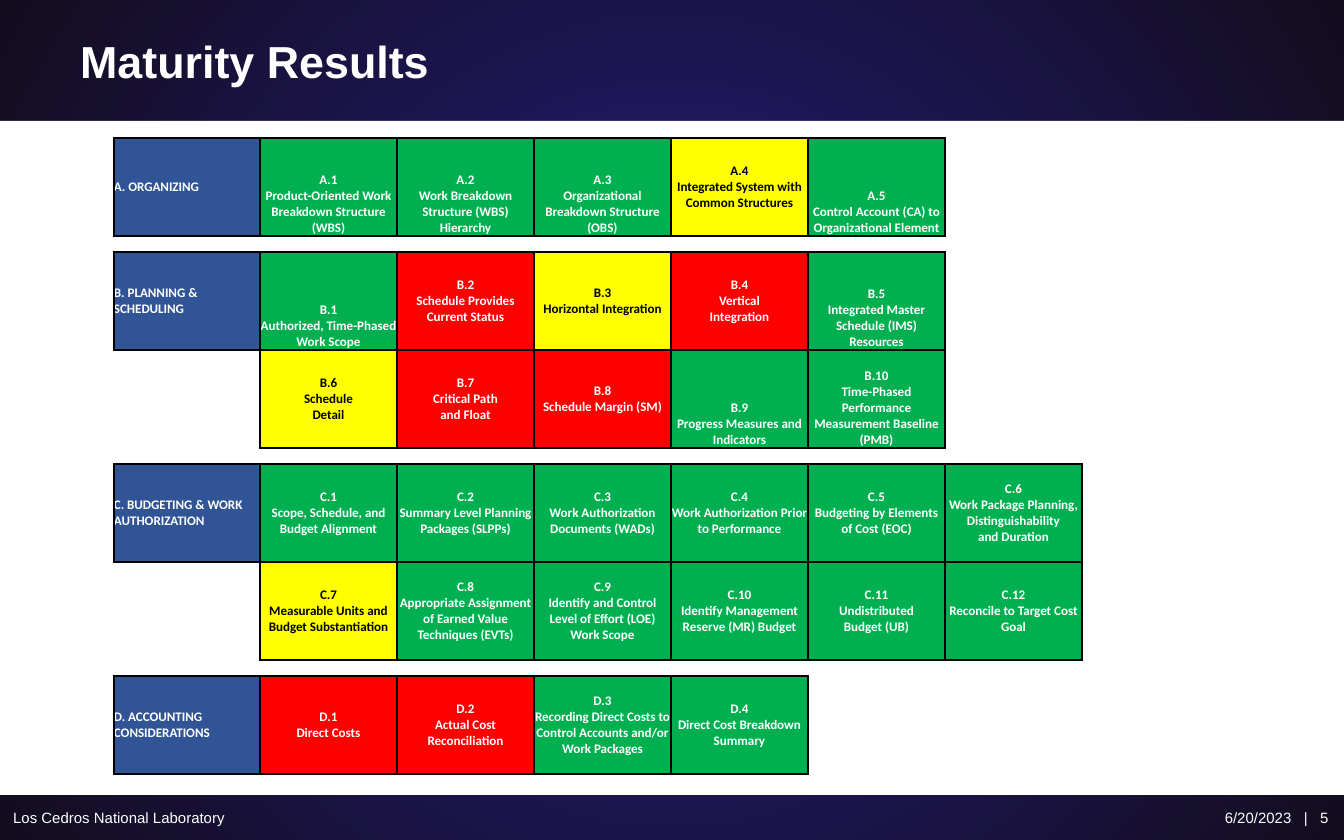
from lxml import etree
from pptx import Presentation
from pptx.dml.color import RGBColor
from pptx.enum.shapes import MSO_SHAPE
from pptx.enum.text import MSO_ANCHOR, PP_ALIGN
from pptx.oxml.ns import qn
from pptx.util import Pt

RECT = MSO_SHAPE.RECTANGLE
MID, LOW = MSO_ANCHOR.MIDDLE, MSO_ANCHOR.BOTTOM
LEFT, MIDST, RIGHT = PP_ALIGN.LEFT, PP_ALIGN.CENTER, PP_ALIGN.RIGHT

WHITE = RGBColor(0xFF, 0xFF, 0xFF)
BLACK = RGBColor(0x00, 0x00, 0x00)
GLOW = RGBColor(0x25, 0x1D, 0x7D)
NIGHT = RGBColor(0x13, 0x0D, 0x1F)
BLUE = RGBColor(0x30, 0x54, 0x96)
GREEN = RGBColor(0x00, 0xB0, 0x50)
RED = RGBColor(0xFF, 0x00, 0x00)
YELLOW = RGBColor(0xFF, 0xFF, 0x00)

SCALE = 914400 / 134.4
WIDE, HIGH = 1344, 840
HEAD, FOOT = 121, 795
PLAIN = "{2D5ABB26-0587-4C30-8999-92F81FD0307C}"

TITLE = {"name": "Arial", "size": Pt(24), "bold": True}
NOTE = {"name": "Arial", "size": Pt(8)}
CELL = {"name": "Calibri", "size": Pt(7), "bold": True}

LOOKS = {
    "G": (GREEN, WHITE, MID),
    "g": (GREEN, WHITE, LOW),
    "Y": (YELLOW, BLACK, MID),
    "R": (RED, WHITE, MID),
}

GROUPS = [
    ("A", "ORGANIZING", [
        ("g", "Product-Oriented Work Breakdown Structure (WBS)"),
        ("g", "Work Breakdown Structure (WBS) Hierarchy"),
        ("g", "Organizational Breakdown Structure (OBS)"),
        ("Y", "Integrated System with Common Structures"),
        ("g", "Control Account (CA) to Organizational Element"),
    ], 5),
    ("B", "PLANNING & SCHEDULING", [
        ("g", "Authorized, Time-Phased Work Scope"),
        ("R", "Schedule Provides Current Status"),
        ("Y", "Horizontal Integration"),
        ("R", "Vertical\nIntegration"),
        ("g", "Integrated Master Schedule (IMS) Resources"),
        ("Y", "Schedule\nDetail"),
        ("R", "Critical Path\nand Float"),
        ("R", "Schedule Margin (SM)"),
        ("g", "Progress Measures and Indicators"),
        ("g", "Time-Phased Performance Measurement Baseline (PMB)"),
    ], 5),
    ("C", "BUDGETING & WORK AUTHORIZATION", [
        ("G", "Scope, Schedule, and Budget Alignment"),
        ("G", "Summary Level Planning Packages (SLPPs)"),
        ("G", "Work Authorization Documents (WADs)"),
        ("G", "Work Authorization Prior to Performance"),
        ("G", "Budgeting by Elements of Cost (EOC)"),
        ("G", "Work Package Planning, Distinguishability\nand Duration"),
        ("Y", "Measurable Units and Budget Substantiation"),
        ("G", "Appropriate Assignment of Earned Value Techniques (EVTs)"),
        ("G", "Identify and Control Level of Effort (LOE) Work Scope"),
        ("G", "Identify Management Reserve (MR) Budget"),
        ("G", "Undistributed\nBudget (UB)"),
        ("G", "Reconcile to Target Cost Goal"),
    ], 6),
    ("D", "ACCOUNTING CONSIDERATIONS", [
        ("R", "Direct Costs"),
        ("R", "Actual Cost Reconciliation"),
        ("G", "Recording Direct Costs to Control Accounts and/or Work Packages"),
        ("G", "Direct Cost Breakdown Summary"),
    ], 4),
]


def px(n):
    return round(n * SCALE)


def style(font, form, tint):
    for key, val in form.items():
        setattr(font, key, val)
    font.color.rgb = tint


def label(slide, box, text, form, align=LEFT):
    frame = slide.shapes.add_textbox(*map(px, box)).text_frame
    frame.word_wrap = True
    frame.vertical_anchor = MID
    para = frame.paragraphs[0]
    para.text, para.alignment = text, align
    style(para.runs[0].font, form, WHITE)


def backdrop(slide, box):
    fill = slide.background.fill
    fill.gradient()
    for stop, tint, at in zip(fill.gradient_stops, (GLOW, NIGHT), (0, 1)):
        stop.color.rgb, stop.position = tint, at
    line = next(slide.element.iter(qn("a:lin")))
    ring = etree.Element(qn("a:path"), path="circle")
    etree.SubElement(ring, qn("a:fillToRect"), dict.fromkeys("ltrb", "50000"))
    line.getparent().replace(line, ring)
    panel = slide.shapes.add_shape(RECT, *map(px, box))
    panel.shadow.inherit = False
    panel.fill.solid()
    panel.fill.fore_color.rgb = WHITE
    panel.line.fill.background()


def header(slide, box):
    x, y, w, h = box
    label(slide, (x + 67, y, w - 134, h), "Maturity Results", TITLE)


def footer(slide, box):
    x, y, w, h = box
    label(slide, (x, y, 487, h), "Los Cedros National Laboratory", NOTE)
    label(slide, (x + w - 315, y, 313, h), "6/20/2023   |   5", NOTE, RIGHT)


def clear(cell):
    for side in ("left", "right", "top", "bottom"):
        setattr(cell, "margin_" + side, 0)
    etree.SubElement(cell.text_frame.paragraphs[0]._p, qn("a:endParaRPr"), sz="600")


def paint(cell, text, fill, ink, anchor, align):
    cell.vertical_anchor = anchor
    para = cell.text_frame.paragraphs[0]
    para.text, para.alignment = text, align
    for run in para.runs:
        style(run.font, CELL, ink)
    for gap in para._p.findall(qn("a:br")):
        etree.SubElement(gap, qn("a:rPr"), sz="700")
    props = cell._tc.get_or_add_tcPr()
    for side in "LRTB":
        edge = etree.SubElement(props, qn("a:ln" + side), w=str(Pt(1)))
        solid = etree.SubElement(edge, qn("a:solidFill"))
        etree.SubElement(solid, qn("a:srgbClr"), val=str(BLACK))
    cell.fill.solid()
    cell.fill.fore_color.rgb = fill


def matrix(slide, box):
    tall, thin = 98, 16
    highs = []
    for _, _, items, span in GROUPS:
        highs += [thin] * bool(highs) + [tall] * (len(items) // span)
    table = slide.shapes.add_table(len(highs), 7, *map(px, box)).table
    table.first_row = table.horz_banding = False
    table._tbl.tblPr.find(qn("a:tableStyleId")).text = PLAIN
    for col, wide in zip(table.columns, [146] + [137] * 6):
        col.width = px(wide)
    for row, high in zip(table.rows, highs):
        row.height = px(high)
    for cell in table.iter_cells():
        clear(cell)
    top = 0
    for key, name, items, span in GROUPS:
        paint(table.cell(top, 0), f"{key}. {name}", BLUE, WHITE, MID, LEFT)
        for i, (look, text) in enumerate(items):
            down, over = divmod(i, span)
            cell = table.cell(top + down, over + 1)
            paint(cell, f"{key}.{i + 1}\n{text}", *LOOKS[look], MIDST)
        top += len(items) // span + 1


def main():
    deck = Presentation()
    deck.slide_width, deck.slide_height = px(WIDE), px(HIGH)
    slide = deck.slides.add_slide(deck.slide_layouts[6])
    backdrop(slide, (0, HEAD, WIDE, FOOT - HEAD))
    header(slide, (0, 0, WIDE, HEAD))
    footer(slide, (0, FOOT, WIDE, HIGH - FOOT))
    matrix(slide, (114, 138, 968, 636))
    deck.save("out.pptx")


if __name__ == "__main__":
    main()
